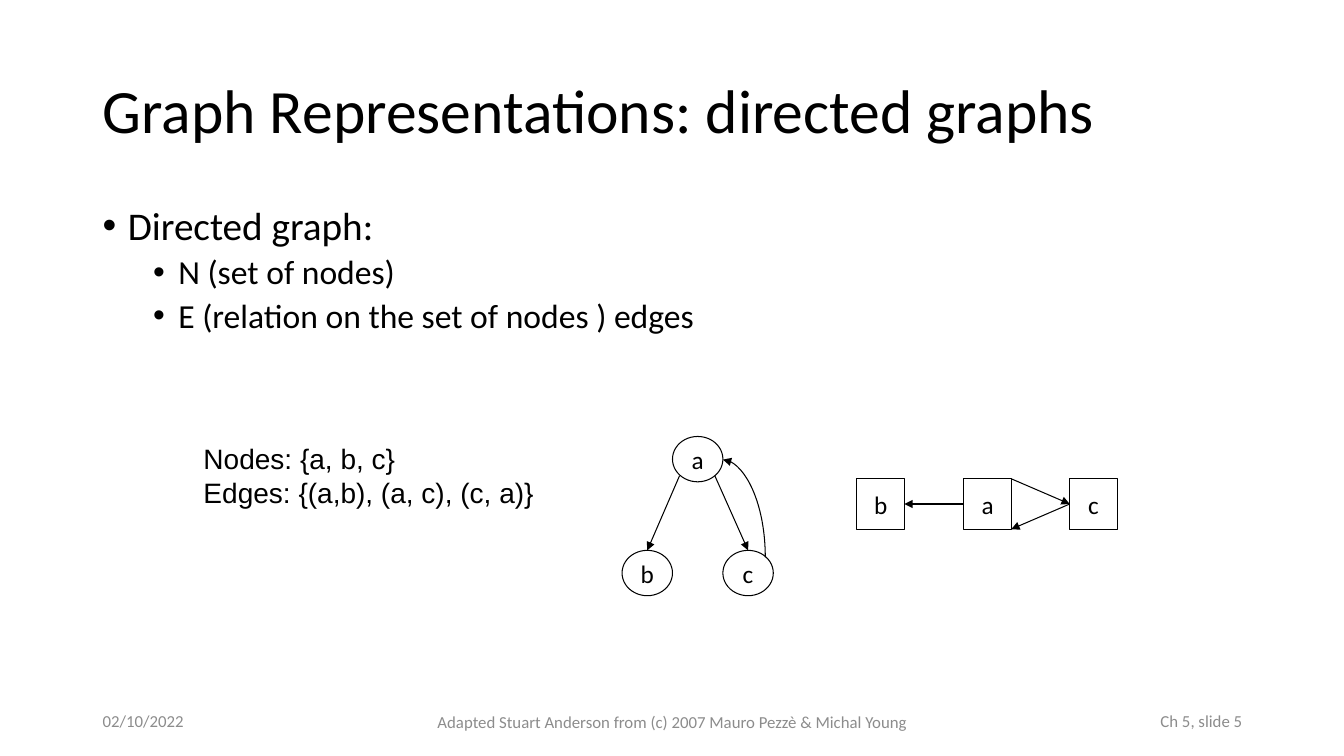
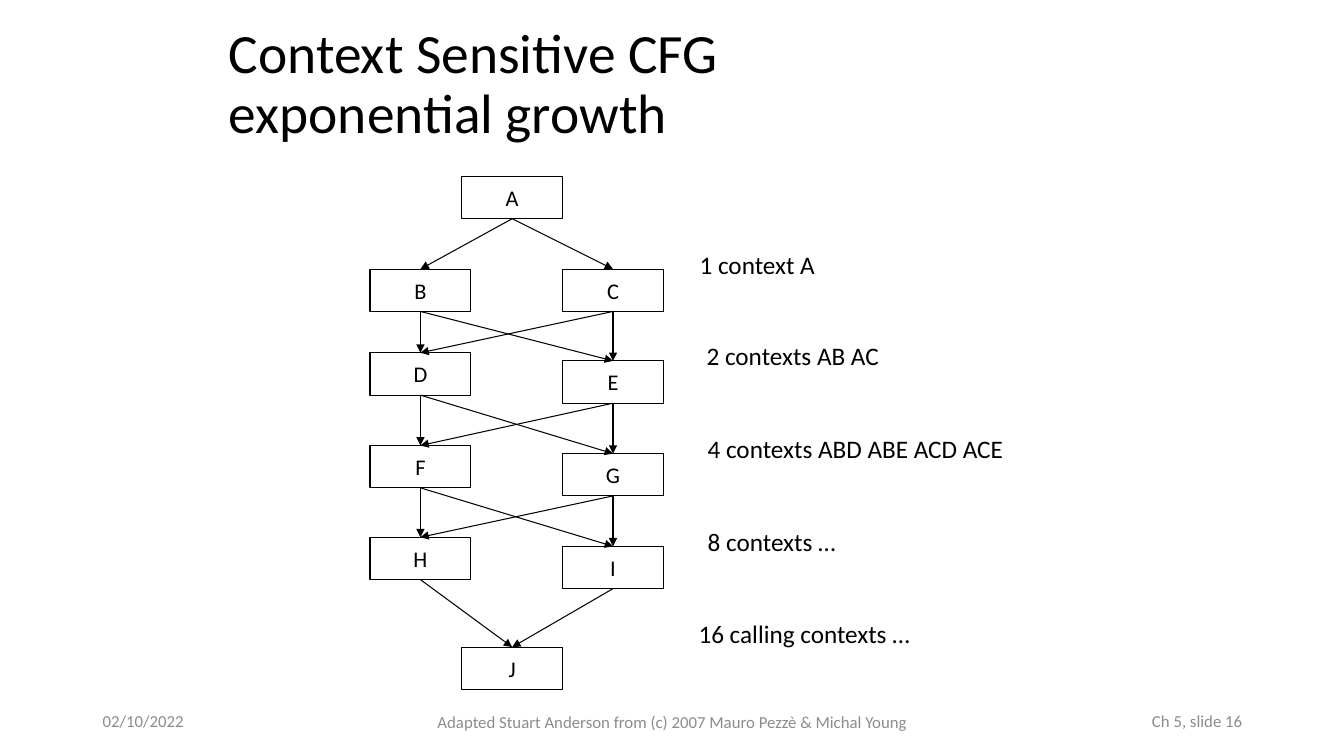
from dataclasses import dataclass
from itertools import pairwise, product
from typing import NamedTuple, Optional

from lxml import etree
from pptx import Presentation
from pptx.dml.color import RGBColor
from pptx.enum.shapes import MSO_CONNECTOR, MSO_SHAPE
from pptx.enum.text import MSO_ANCHOR, MSO_AUTO_SIZE, PP_ALIGN
from pptx.oxml.ns import qn
from pptx.shapes.autoshape import Shape
from pptx.shapes.connector import Connector
from pptx.slide import Slide
from pptx.util import Inches, Pt

BLACK = RGBColor(0x00, 0x00, 0x00)
GREY = RGBColor(0x8C, 0x8C, 0x8C)
BODY_FONT = "Calibri"
SET_FONT = "Arial"
LINE_WIDTH = Pt(0.75)
LINE_SPACING = 0.9
TITLE_ONLY = 5

RECTANGLE = MSO_SHAPE.RECTANGLE
OVAL = MSO_SHAPE.OVAL
STRAIGHT = MSO_CONNECTOR.STRAIGHT
CURVE = MSO_CONNECTOR.CURVE
LEFT = PP_ALIGN.LEFT
CENTER = PP_ALIGN.CENTER
RIGHT = PP_ALIGN.RIGHT
TOP = MSO_ANCHOR.TOP
MIDDLE = MSO_ANCHOR.MIDDLE
BOTTOM = MSO_ANCHOR.BOTTOM
NO_AUTOFIT = MSO_AUTO_SIZE.NONE
GROW_SHAPE = MSO_AUTO_SIZE.SHAPE_TO_FIT_TEXT

SITE_TOP, SITE_LEFT, SITE_BOTTOM, SITE_RIGHT = range(4)


class Box(NamedTuple):
    """Left, top, width and height in inches."""
    left: float
    top: float
    width: float
    height: float

    def lengths(self) -> list[Inches]:
        return [Inches(value) for value in self]


@dataclass(frozen=True)
class TextStyle:
    size: float
    color: RGBColor = BLACK
    font: str = BODY_FONT
    align: PP_ALIGN = LEFT


@dataclass(frozen=True)
class ArrowEnd:
    """A free point in inches, or a connection site of a shape."""
    x: float = 0
    y: float = 0
    shape: Optional[Shape] = None
    site: int = SITE_TOP


class Bullet(NamedTuple):
    text: str
    level: int
    size: float
    indent: float
    space_before: float


class ContextLabel(NamedTuple):
    text: str
    left: float
    top: float
    width: float


FOOTER_STYLE = TextStyle(12, GREY)
FOOTERS = [
    ("02/10/2022", Box(0.92, 6.95, 1.5, 0.4), LEFT),
    ("Adapted Stuart Anderson from (c) 2007 Mauro Pezzè & Michal Young",
     Box(3.93, 6.96, 5.48, 0.4), CENTER),
    ("Ch 5, slide {number}", Box(10.53, 6.95, 1.89, 0.4), RIGHT),
]

BULLETS = [
    Bullet("Directed graph:", 0, 28, 0.25, 10),
    Bullet("N (set of nodes)", 1, 24, 0.75, 5),
    Bullet("E (relation on the set of nodes ) edges", 1, 24, 0.75, 5),
]

CIRCLE_POSITIONS = {"a": (6.67, 4.33), "b": (6.17, 5.46), "c": (7.17, 5.46)}
SQUARE_LEFTS = {"b": 8.5, "a": 9.56, "c": 10.61}
SQUARE_TOP = 4.75

CALL_LEVELS = ["A", "BC", "DE", "FG", "HI", "J"]
CALL_COLUMNS = [
    (3.67, {"B": 2.67, "D": 3.5, "F": 4.42, "H": 5.33}),
    (4.58, {"A": 1.75, "J": 6.42}),
    (5.58, {"C": 2.67, "E": 3.58, "G": 4.5, "I": 5.42}),
]
CONTEXT_LABELS = [
    ContextLabel("1 context A", 6.84, 2.42, 1.48),
    ContextLabel("2 contexts AB AC", 6.91, 3.33, 2.1),
    ContextLabel("4 contexts ABD ABE ACD ACE", 6.92, 4.25, 3.4),
    ContextLabel("8 contexts …", 6.92, 5.17, 1.62),
    ContextLabel("16 calling contexts …", 6.83, 6.08, 2.56),
]


def set_text(shape: Shape, text: str, style: TextStyle, anchor: MSO_ANCHOR,
             wrap: bool = True) -> None:
    text_frame = shape.text_frame
    text_frame.text = text
    text_frame.word_wrap = wrap
    text_frame.vertical_anchor = anchor
    for paragraph in text_frame.paragraphs:
        paragraph.alignment = style.align
        for run in paragraph.runs:
            run.font.size = Pt(style.size)
            run.font.name = style.font
            run.font.color.rgb = style.color


def add_text(slide: Slide, text: str, box: Box, style: TextStyle,
             anchor: MSO_ANCHOR = TOP, wrap: bool = True) -> Shape:
    shape = slide.shapes.add_textbox(*box.lengths())
    set_text(shape, text, style, anchor, wrap)
    return shape


def add_slide(presentation: Presentation, title: str, box: Box, size: float,
              number: int) -> Slide:
    """Add a slide with its title and the shared footers."""
    slide = presentation.slides.add_slide(presentation.slide_layouts[TITLE_ONLY])
    shape = slide.shapes.title
    shape.left, shape.top, shape.width, shape.height = box.lengths()
    set_text(shape, title, TextStyle(size), MIDDLE)
    shape.text_frame.auto_size = NO_AUTOFIT
    shape.text_frame.paragraphs[0].line_spacing = LINE_SPACING
    for line_break in shape.element.iter(qn("a:br")):
        etree.SubElement(line_break, qn("a:rPr"), sz=str(Pt(size).centipoints))
    for text, footer_box, align in FOOTERS:
        style = TextStyle(FOOTER_STYLE.size, FOOTER_STYLE.color, align=align)
        add_text(slide, text.format(number=number), footer_box, style, MIDDLE)
    return slide


def add_bullets(slide: Slide, bullets: list[Bullet], box: Box) -> None:
    text = "\n".join(bullet.text for bullet in bullets)
    shape = add_text(slide, text, box, TextStyle(bullets[0].size))
    for bullet, paragraph in zip(bullets, shape.text_frame.paragraphs):
        paragraph.level = bullet.level
        paragraph.line_spacing = LINE_SPACING
        paragraph.space_before = Pt(bullet.space_before)
        paragraph.runs[0].font.size = Pt(bullet.size)
        properties = paragraph._p.get_or_add_pPr()
        properties.set("marL", str(Inches(bullet.indent)))
        properties.set("indent", str(Inches(-0.25)))
        etree.SubElement(properties, qn("a:buFont"), typeface=SET_FONT)
        etree.SubElement(properties, qn("a:buChar"), char="•")


def add_node(slide: Slide, kind: MSO_SHAPE, name: str, box: Box,
             size: float) -> Shape:
    shape = slide.shapes.add_shape(kind, *box.lengths())
    shape.shadow.inherit = False
    shape.fill.background()
    shape.line.color.rgb = BLACK
    shape.line.width = LINE_WIDTH
    set_text(shape, name, TextStyle(size, align=CENTER), MIDDLE, wrap=False)
    return shape


def add_line(slide: Slide, kind: MSO_CONNECTOR, start: ArrowEnd, end: ArrowEnd,
             arrowhead: str) -> Connector:
    """Add a connector; arrowhead is a:headEnd (start) or a:tailEnd (end)."""
    connector = slide.shapes.add_connector(
        kind, Inches(start.x), Inches(start.y), Inches(end.x), Inches(end.y))
    if start.shape is not None:
        connector.begin_connect(start.shape, start.site)
    if end.shape is not None:
        connector.end_connect(end.shape, end.site)
    connector.line.color.rgb = BLACK
    connector.line.width = LINE_WIDTH
    etree.SubElement(connector.line._get_or_add_ln(), qn(arrowhead), type="triangle")
    etree.SubElement(connector.element.spPr, qn("a:effectLst"))
    return connector


def add_arrow(slide: Slide, start: ArrowEnd, end: ArrowEnd) -> None:
    add_line(slide, STRAIGHT, start, end, "a:tailEnd")


def add_quarter_curve(slide: Slide, start: ArrowEnd, end: ArrowEnd) -> None:
    """Add a curve with one bend and its arrowhead at the start."""
    connector = add_line(slide, CURVE, start, end, "a:headEnd")
    geometry = connector.element.spPr.find(qn("a:prstGeom"))
    geometry.set("prst", "curvedConnector2")


def draw_circle_graph(slide: Slide) -> None:
    for name, (left, top) in CIRCLE_POSITIONS.items():
        add_node(slide, OVAL, name, Box(left, top, 0.5, 0.45), 18)
    add_arrow(slide, ArrowEnd(6.74, 4.72), ArrowEnd(6.42, 5.46))
    add_arrow(slide, ArrowEnd(7.09, 4.72), ArrowEnd(7.42, 5.46))
    add_quarter_curve(slide, ArrowEnd(7.17, 4.56), ArrowEnd(7.59, 5.53))


def draw_square_graph(slide: Slide) -> None:
    width, height = 0.47, 0.5
    squares = {
        name: add_node(slide, RECTANGLE, name, Box(left, SQUARE_TOP, width, height), 18)
        for name, left in SQUARE_LEFTS.items()
    }
    corner_x = SQUARE_LEFTS["a"] + width
    c_left = ArrowEnd(shape=squares["c"], site=SITE_LEFT)
    add_arrow(slide, ArrowEnd(shape=squares["a"], site=SITE_LEFT),
              ArrowEnd(shape=squares["b"], site=SITE_RIGHT))
    add_arrow(slide, c_left, ArrowEnd(corner_x, SQUARE_TOP + height))
    add_arrow(slide, ArrowEnd(corner_x, SQUARE_TOP), c_left)


def draw_call_graph(slide: Slide) -> None:
    """Link every node to all nodes of the next level."""
    nodes = {
        name: add_node(slide, RECTANGLE, name, Box(left, top, 1, 0.42), 16)
        for left, tops in CALL_COLUMNS for name, top in tops.items()
    }
    for callers, callees in pairwise(CALL_LEVELS):
        for caller, callee in product(callers, callees):
            add_arrow(slide, ArrowEnd(shape=nodes[caller], site=SITE_BOTTOM),
                      ArrowEnd(shape=nodes[callee], site=SITE_TOP))


def build_directed_graphs(presentation: Presentation) -> None:
    slide = add_slide(presentation, "Graph Representations: directed graphs",
                      Box(0.92, 0.4, 11.5, 1.45), 44, 5)
    add_bullets(slide, BULLETS, Box(0.92, 2, 11.5, 4.76))
    add_text(slide, "Nodes: {a, b, c}\nEdges: {(a,b), (a, c), (c, a)}",
             Box(1.92, 4.33, 4.33, 0.92), TextStyle(20, font=SET_FONT))
    draw_circle_graph(slide)
    draw_square_graph(slide)


def build_context_growth(presentation: Presentation) -> None:
    slide = add_slide(presentation, "Context Sensitive CFG\vexponential growth",
                      Box(2.17, 0.25, 9, 1.2), 39.6, 16)
    draw_call_graph(slide)
    for label in CONTEXT_LABELS:
        box = Box(label.left, label.top, label.width, 0.4)
        shape = add_text(slide, label.text, box, TextStyle(18), BOTTOM, wrap=False)
        shape.text_frame.auto_size = GROW_SHAPE


def main() -> None:
    presentation = Presentation()
    presentation.slide_width = Inches(13.33)
    presentation.slide_height = Inches(7.5)
    build_directed_graphs(presentation)
    build_context_growth(presentation)
    presentation.save("out.pptx")


if __name__ == "__main__":
    main()
